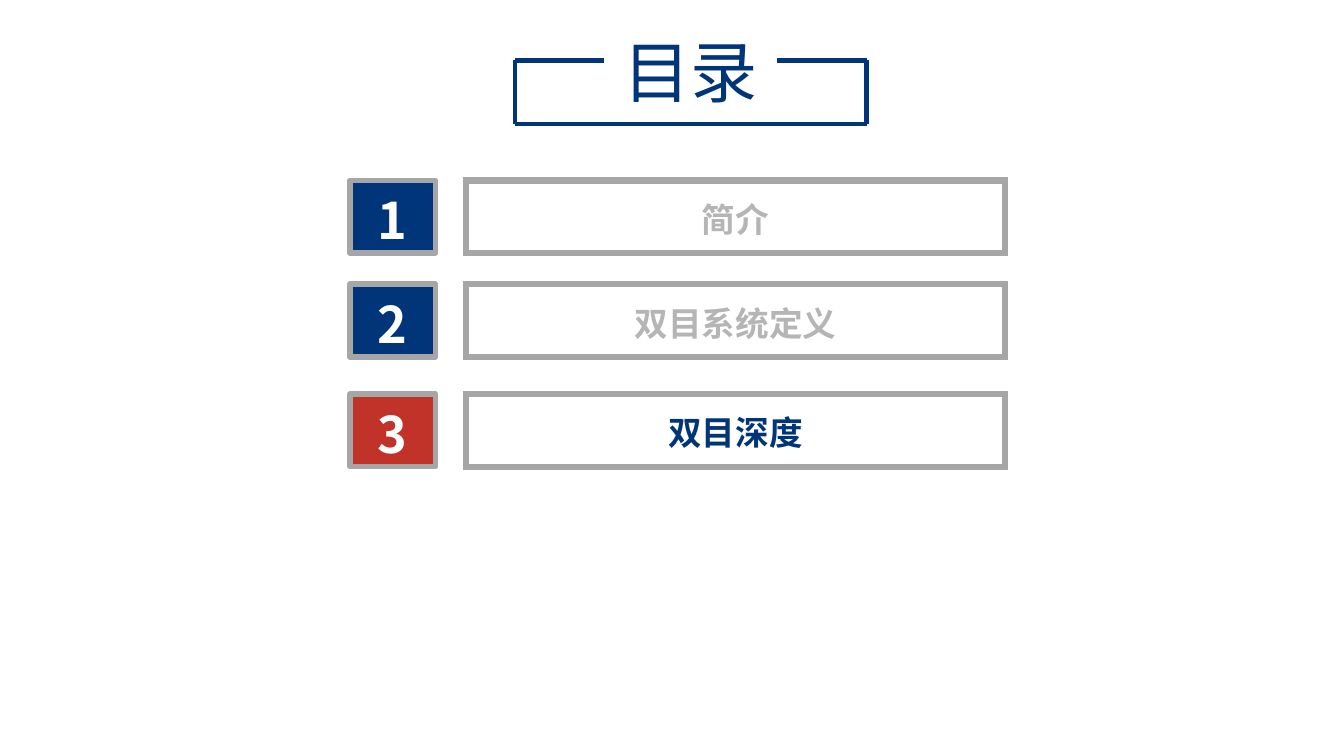
from dataclasses import dataclass

from lxml.etree import SubElement
from pptx import Presentation
from pptx.dml.color import RGBColor
from pptx.enum.shapes import MSO_CONNECTOR, MSO_SHAPE
from pptx.enum.text import MSO_ANCHOR, PP_ALIGN
from pptx.oxml.ns import qn
from pptx.shapes.autoshape import Shape
from pptx.slide import Slide
from pptx.util import Inches, Length, Pt

WIDTH, HEIGHT = Inches(13.33), Inches(7.5)


@dataclass(frozen=True)
class Theme:
    font: str = "Noto Sans CJK SC"
    navy: str = "003679"
    red: str = "C13228"
    white: str = "FFFFFF"
    edge: str = "A6A6A6"
    muted: str = "B5B5B6"
    title: int = 48
    number: int = 36
    label: int = 24
    rule: float = 3
    badge: float = 4
    frame: float = 4.5


THEME = Theme()


@dataclass(frozen=True)
class Box:
    """A rectangle in percent of the slide's width and height."""
    left: float
    top: float
    width: float
    height: float

    def place(self) -> tuple[Length, Length, Length, Length]:
        return (across(self.left), down(self.top),
                across(self.width), down(self.height))


@dataclass(frozen=True)
class Topic:
    label: str
    top: float
    fill: str
    color: str


@dataclass(frozen=True)
class Rule:
    left: float
    top: float
    right: float
    bottom: float


TOPICS = (
    Topic("简介", 23.87, THEME.navy, THEME.muted),
    Topic("双目系统定义", 37.6, THEME.navy, THEME.muted),
    Topic("双目深度", 52.13, THEME.red, THEME.navy),
)
ROW = 9.6
BADGE_LEFT, BADGE_WIDTH = 26.03, 6.38
FRAME_LEFT, FRAME_WIDTH = 34.66, 40.14

TITLE = Box(43.74, 3.33, 15.3, 12.13)
LEFT, RIGHT, TOP, BASE = 38.3, 64.48, 8, 16.4
STUB = 6.64
RULES = (
    Rule(RIGHT - STUB, TOP, RIGHT, TOP),
    Rule(LEFT, TOP, LEFT + STUB, TOP),
    Rule(LEFT, BASE, RIGHT, BASE),
    Rule(LEFT, TOP, LEFT, BASE),
    Rule(RIGHT, TOP, RIGHT, BASE),
)


def across(share: float) -> Length:
    return Length(round(WIDTH * share / 100))


def down(share: float) -> Length:
    return Length(round(HEIGHT * share / 100))


def paint(color: str) -> RGBColor:
    return RGBColor.from_string(color)


def write(shape: Shape, text: str, size: int, color: str,
          bold: bool = False, pitch: float = 1) -> None:
    frame = shape.text_frame
    frame.word_wrap = True
    frame.vertical_anchor = MSO_ANCHOR.MIDDLE
    frame.margin_top = frame.margin_bottom = 0
    para = frame.paragraphs[0]
    para.text = text
    para.alignment = PP_ALIGN.CENTER
    para.line_spacing = pitch
    font = para.font
    font.name, font.size, font.bold = THEME.font, Pt(size), bold
    font.color.rgb = paint(color)
    props = para._p.pPr.find(qn("a:defRPr"))
    SubElement(props, qn("a:ea"), typeface=THEME.font)


def add_box(slide: Slide, box: Box, weight: float, fill: str = "") -> Shape:
    shape = slide.shapes.add_shape(MSO_SHAPE.RECTANGLE, *box.place())
    shape.shadow.inherit = False
    if fill:
        shape.fill.solid()
        shape.fill.fore_color.rgb = paint(fill)
    else:
        shape.fill.background()
    shape.line.color.rgb = paint(THEME.edge)
    shape.line.width = Pt(weight)
    return shape


def add_rule(slide: Slide, rule: Rule) -> None:
    line = slide.shapes.add_connector(
        MSO_CONNECTOR.STRAIGHT, across(rule.left), down(rule.top),
        across(rule.right), down(rule.bottom))
    line.line.color.rgb = paint(THEME.navy)
    line.line.width = Pt(THEME.rule)
    SubElement(line._element.spPr, qn("a:effectLst"))


def add_topic(slide: Slide, number: int, topic: Topic) -> None:
    badge = add_box(slide, Box(BADGE_LEFT, topic.top, BADGE_WIDTH, ROW),
                    THEME.badge, topic.fill)
    write(badge, str(number), THEME.number, THEME.white, True, 1.1)
    frame = add_box(slide, Box(FRAME_LEFT, topic.top, FRAME_WIDTH, ROW),
                    THEME.frame)
    SubElement(frame.line._get_or_add_ln(), qn("a:miter"), lim="800000")
    write(frame, topic.label, THEME.label, topic.color, True, 1.1)


def main() -> None:
    deck = Presentation()
    deck.slide_width, deck.slide_height = WIDTH, HEIGHT
    slide = deck.slides.add_slide(deck.slide_layouts[6])
    title = slide.shapes.add_textbox(*TITLE.place())
    write(title, "目录", THEME.title, THEME.navy)
    for rule in RULES:
        add_rule(slide, rule)
    for number, topic in enumerate(TOPICS, 1):
        add_topic(slide, number, topic)
    deck.save("out.pptx")


if __name__ == "__main__":
    main()
